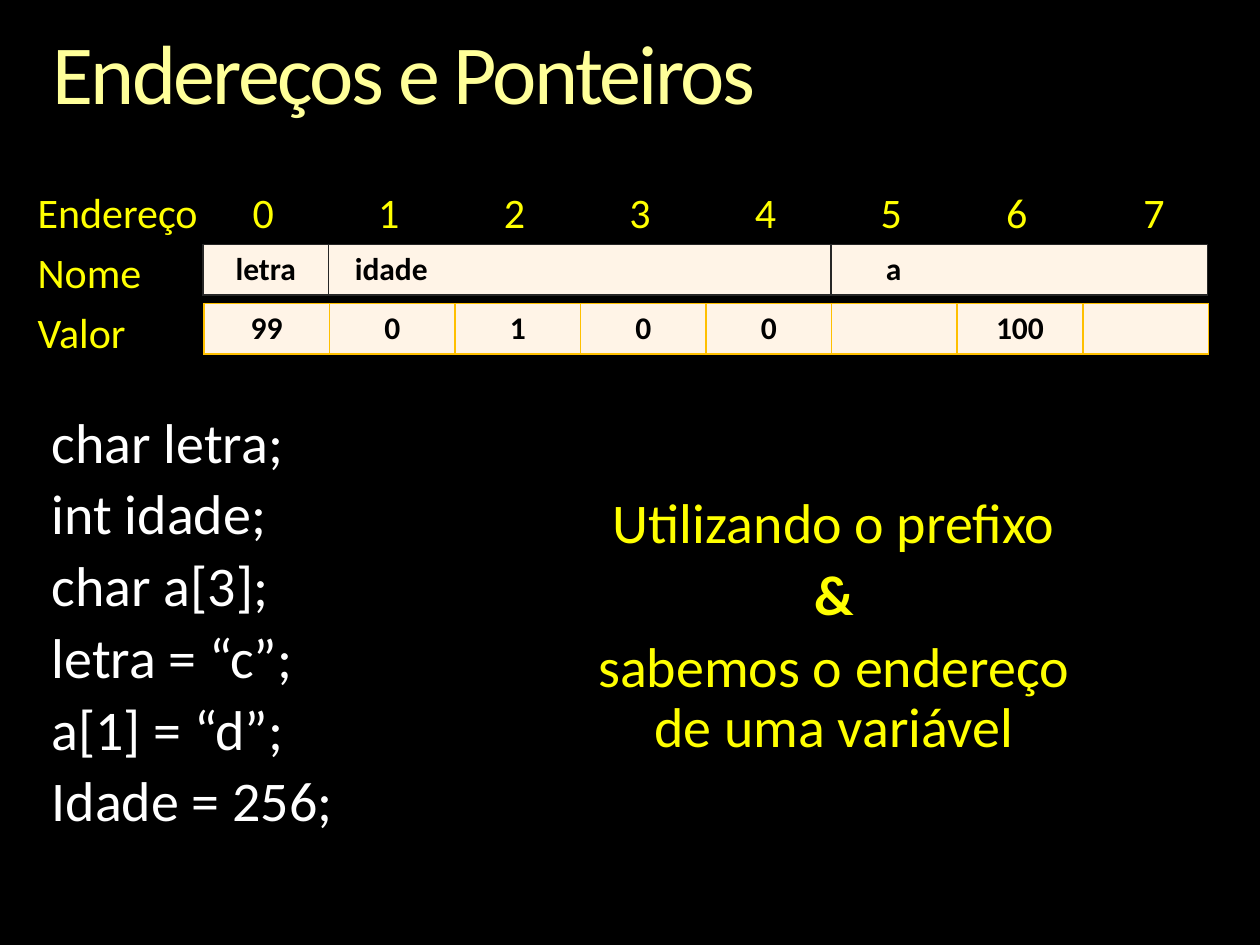
from dataclasses import dataclass

from lxml.etree import SubElement
from pptx import Presentation
from pptx.dml.color import RGBColor
from pptx.enum.text import MSO_ANCHOR, PP_ALIGN
from pptx.oxml.ns import qn
from pptx.util import Pt

FONT = "Calibri"
COLORS = {
    "black": "000000",
    "white": "FFFFFF",
    "yellow": "FFFF00",
    "title": "FFFF99",
    "cream": "FFF4E7",
    "dark": "262626",
    "gold": "FFC000",
}
COUNT = 8
PITCH = 71.75
STOPS = [129 + PITCH * i for i in range(COUNT - 1)] + [638]


@dataclass
class Line:
    text: str
    bold: bool = False


@dataclass
class Box:
    left: float
    top: float
    width: float
    height: float
    lines: list[Line]
    size: float
    color: str
    inset: tuple[float, float] = (0, 0)
    align: PP_ALIGN = PP_ALIGN.LEFT
    scale: float = 0.9
    track: int = 0
    tabs: tuple[float, ...] = ()


@dataclass
class Strip:
    left: float
    top: float
    cells: list[str]
    edges: set[int]
    line: str


def rgb(name: str) -> RGBColor:
    return RGBColor.from_string(COLORS[name])


def add_run(para, text: str, size: float, color: str, bold: bool):
    run = para.add_run()
    run.text = text
    font = run.font
    font.name, font.size, font.bold = FONT, Pt(size), bold
    font.color.rgb = rgb(color)
    return run


def add_tabs(para, stops: tuple[float, ...]) -> None:
    tabs = SubElement(para._p.get_or_add_pPr(), qn("a:tabLst"))
    for stop in stops:
        SubElement(tabs, qn("a:tab"), pos=str(Pt(stop)), algn="ctr")


def draw_box(slide, box: Box) -> None:
    shape = slide.shapes.add_textbox(
        Pt(box.left), Pt(box.top), Pt(box.width), Pt(box.height))
    frame = shape.text_frame
    frame.word_wrap = True
    frame.vertical_anchor = MSO_ANCHOR.TOP
    side, edge = box.inset
    frame.margin_left = frame.margin_right = Pt(side)
    frame.margin_top = frame.margin_bottom = Pt(edge)
    for i, line in enumerate(box.lines):
        para = frame.add_paragraph() if i else frame.paragraphs[0]
        para.alignment = box.align
        para.line_spacing = box.scale
        if i:
            para.space_before = Pt(box.size * 0.2)
        if box.tabs:
            add_tabs(para, box.tabs)
        run = add_run(para, line.text, box.size, box.color, line.bold)
        if box.track:
            run.font._element.set("spc", str(box.track))


def add_edge(cell, side: str, color: str, shown: bool) -> None:
    line = SubElement(cell._tc.get_or_add_tcPr(), qn(f"a:ln{side}"), w=str(Pt(1)))
    if shown:
        fill = SubElement(line, qn("a:solidFill"))
        SubElement(fill, qn("a:srgbClr"), val=COLORS[color])
    else:
        SubElement(line, qn("a:noFill"))


def draw_strip(slide, strip: Strip) -> None:
    frame = slide.shapes.add_table(
        1, COUNT, Pt(strip.left), Pt(strip.top), Pt(PITCH * COUNT), Pt(28.8))
    table = frame.table
    table.first_row = table.horz_banding = False
    for i, text in enumerate(strip.cells):
        table.columns[i].width = Pt(PITCH)
        cell = table.cell(0, i)
        add_edge(cell, "L", strip.line, i in strip.edges)
        add_edge(cell, "R", strip.line, i + 1 in strip.edges)
        add_edge(cell, "T", strip.line, True)
        add_edge(cell, "B", strip.line, True)
        cell.fill.solid()
        cell.fill.fore_color.rgb = rgb("cream")
        if text:
            para = cell.text_frame.paragraphs[0]
            para.alignment = PP_ALIGN.CENTER
            add_run(para, text, 18, "black", True)


def label(top: float, text: str, width: float = 85,
          tabs: tuple[float, ...] = ()) -> Box:
    return Box(14.4, top, width, 36, [Line(text)], 24, "yellow",
               inset=(7.2, 3.6), scale=1, tabs=tabs)


def main() -> None:
    deck = Presentation()
    deck.slide_width, deck.slide_height = Pt(720), Pt(540)
    slide = deck.slides.add_slide(deck.slide_layouts[6])
    fill = slide.background.fill
    fill.solid()
    fill.fore_color.rgb = rgb("black")

    head = "\t".join(["Endereço", *map(str, range(COUNT))])
    code = ["char letra;", "int idade;", "char a[3];",
            "letra = “c”;", "a[1] = “d”;", "Idade = 256;"]
    note = [Line("Utilizando o prefixo"), Line("&", True),
            Line("sabemos o endereço de uma variável")]

    draw_box(slide, Box(30, 18, 660, 52.6, [Line("Endereços e Ponteiros")],
                        48, "title", track=-150))
    draw_strip(slide, Strip(
        116, 139.7, ["letra", "idade", "", "", "", "a", "", ""],
        {0, 1, 5, COUNT}, "dark"))
    draw_box(slide, label(103, head, 676, tuple(STOPS)))
    draw_box(slide, label(137.5, "Nome"))
    draw_box(slide, label(171.4, "Valor"))
    draw_strip(slide, Strip(
        116.5, 173.5, ["99", "0", "1", "0", "0", "", "100", ""],
        set(range(COUNT + 1)), "gold"))
    draw_box(slide, Box(29.5, 237, 228, 248, [Line(text) for text in code],
                        32, "white"))
    draw_box(slide, Box(326, 283, 301, 155, note, 32, "yellow",
                        align=PP_ALIGN.CENTER))
    deck.save("out.pptx")


if __name__ == "__main__":
    main()
